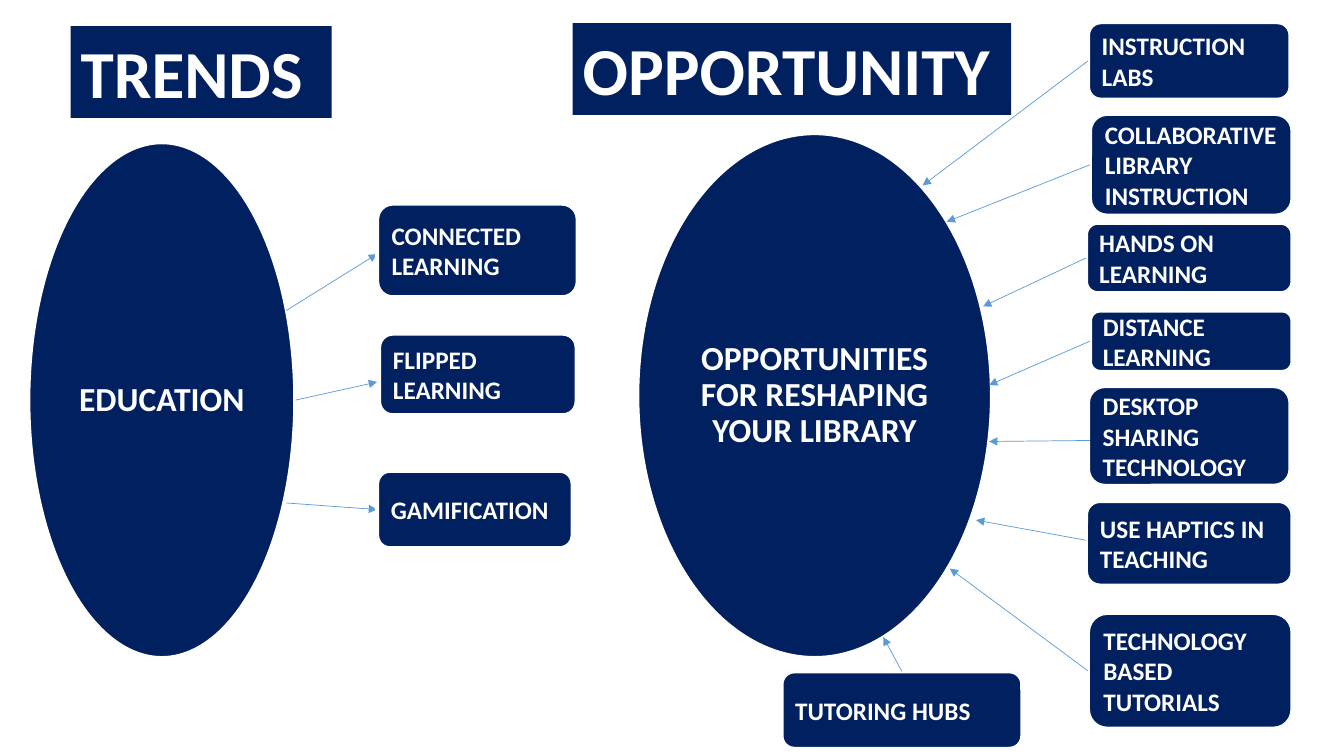
from lxml.etree import SubElement
from pptx import Presentation
from pptx.dml.color import RGBColor
from pptx.enum.shapes import MSO_CONNECTOR, MSO_SHAPE
from pptx.enum.text import MSO_ANCHOR, MSO_AUTO_SIZE, PP_ALIGN
from pptx.oxml.ns import qn
from pptx.util import Pt

EMU_PER_PX = 9144  # 100 px to the inch
LEFT_SIDE, TOP_SIDE = 1, 0


def px(length):
    return length * EMU_PER_PX


def color(hex_value):
    return RGBColor.from_string(hex_value)


class Diagram:
    NAVY, WHITE, BLUE = "002060", "FFFFFF", "5B9BD5"
    FONT = "Calibri"

    def __init__(self, slide):
        self.slide = slide

    def put_text(self, frame, lines, size, align=PP_ALIGN.LEFT):
        frame.word_wrap = True
        for number, line in enumerate(lines):
            paragraph = frame.add_paragraph() if number else frame.paragraphs[0]
            paragraph.alignment = align
            run = paragraph.add_run()
            run.text = line
            run.font.name = self.FONT
            run.font.size = Pt(size)
            run.font.bold = True
            run.font.color.rgb = color(self.WHITE)

    def outlined(self, preset, place, border):
        shape = self.slide.shapes.add_shape(preset, *map(px, place))
        shape.shadow.inherit = False
        shape.fill.solid()
        shape.fill.fore_color.rgb = color(self.NAVY)
        shape.line.color.rgb = color(self.WHITE)
        shape.line.width = Pt(border)
        shape.text_frame.vertical_anchor = MSO_ANCHOR.MIDDLE
        return shape

    def heading(self, text, place):
        box = self.slide.shapes.add_textbox(*map(px, place))
        box.fill.solid()
        box.fill.fore_color.rgb = color(self.NAVY)
        self.put_text(box.text_frame, [text], 48)
        box.text_frame.auto_size = MSO_AUTO_SIZE.SHAPE_TO_FIT_TEXT

    def hub(self, text, place):
        oval = self.outlined(MSO_SHAPE.OVAL, place, 4.5)
        self.put_text(oval.text_frame, [text], 24, PP_ALIGN.CENTER)
        paragraph = oval.text_frame.paragraphs[0]
        paragraph.line_spacing = 0.9
        paragraph.space_before = Pt(10)

    def topic(self, lines, place):
        box = self.outlined(MSO_SHAPE.ROUNDED_RECTANGLE, place, 3)
        self.put_text(box.text_frame, lines, 18)
        return box

    def arrow(self, start, end):
        connector = self.slide.shapes.add_connector(
            MSO_CONNECTOR.STRAIGHT, *map(px, start + end))
        connector.line.color.rgb = color(self.BLUE)
        connector.line.width = Pt(0.5)
        properties = connector.element.spPr
        SubElement(properties.find(qn("a:ln")), qn("a:tailEnd"), type="triangle")
        SubElement(properties, qn("a:effectLst"))
        return connector


# Lines of text, box, arrow start, arrow end, joined side of the box
TRENDS = [
    (["CONNECTED LEARNING"], (374, 202, 199, 93), (284, 308), (374, 252), None),
    (["FLIPPED LEARNING"], (376, 331, 196, 81), (293, 397), (374, 379), None),
    (["GAMIFICATION"], (374, 467, 194, 77), (284, 499), (374, 505), LEFT_SIDE),
]
OPPORTUNITIES = [
    (["INSTRUCTION LABS"], (1079, 22, 201, 77), (1079, 61), (915, 184), LEFT_SIDE),
    (["COLLABORATIVE LIBRARY INSTRUCTION"], (1081, 113, 201, 101),
     (1081, 163), (939, 220), LEFT_SIDE),
    (["HANDS ON LEARNING"], (1077, 221, 205, 70), (1077, 256), (975, 304), LEFT_SIDE),
    (["DISTANCE LEARNING"], (1081, 308, 201, 61), (1081, 338), (981, 382), LEFT_SIDE),
    (["DESKTOP SHARING", "TECHNOLOGY"], (1079, 383, 201, 99),
     (1081, 437), (981, 438), None),
    (["USE HAPTICS IN TEACHING"], (1077, 497, 205, 84), (1077, 536), (968, 516), None),
    (["TECHNOLOGY BASED", "TUTORIALS"], (1079, 608, 203, 115),
     (1079, 666), (942, 564), LEFT_SIDE),
    (["TUTORING HUBS"], (775, 666, 239, 77), (894, 666), (876, 632), TOP_SIDE),
]


def main():
    deck = Presentation()
    deck.slide_width, deck.slide_height = px(1333), px(750)
    diagram = Diagram(deck.slides.add_slide(deck.slide_layouts[6]))

    # Headings and hubs
    diagram.heading("TRENDS", (70, 26, 259, 91))
    diagram.heading("OPPORTUNITY", (568, 23, 435, 91))
    diagram.hub("EDUCATION", (27, 140, 267, 514))
    diagram.hub("OPPORTUNITIES FOR RESHAPING YOUR LIBRARY", (631, 131, 354, 523))

    # Trends: arrows lead out of the hub and lie behind the boxes
    for lines, place, start, end, side in TRENDS:
        arrow = diagram.arrow(start, end)
        trend = diagram.topic(lines, place)
        if side is not None:
            arrow.end_connect(trend, side)

    # Opportunities: arrows lead from the boxes into the hub
    for lines, place, start, end, side in OPPORTUNITIES:
        opportunity = diagram.topic(lines, place)
        arrow = diagram.arrow(start, end)
        if side is not None:
            arrow.begin_connect(opportunity, side)

    deck.save("out.pptx")


if __name__ == "__main__":
    main()
